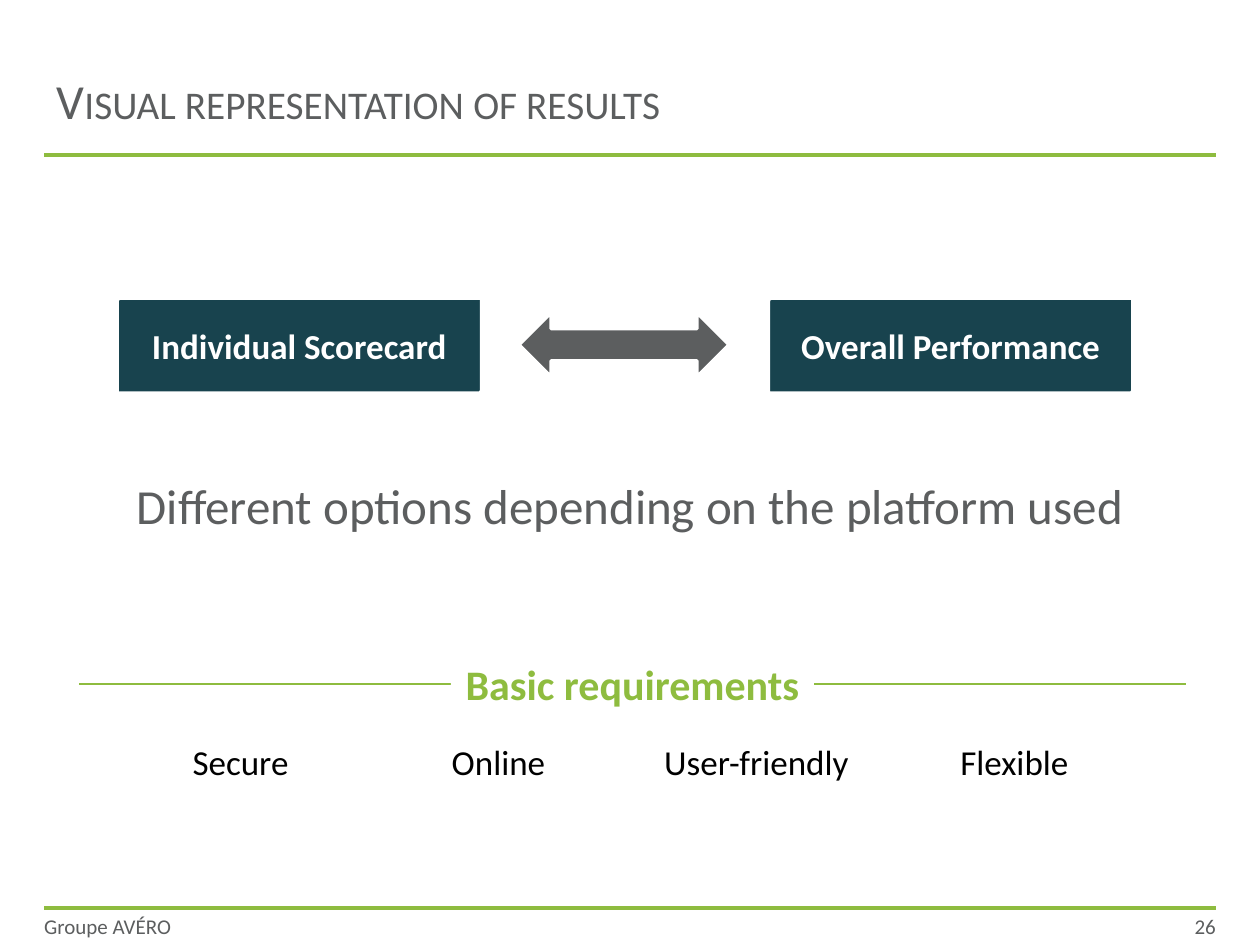
from dataclasses import dataclass

from lxml import etree
from pptx import Presentation
from pptx.dml.color import RGBColor
from pptx.enum.shapes import MSO_CONNECTOR, MSO_SHAPE
from pptx.enum.text import MSO_ANCHOR, MSO_AUTO_SIZE, PP_ALIGN
from pptx.oxml.ns import qn
from pptx.util import Cm, Pt

STRAIGHT = MSO_CONNECTOR.STRAIGHT
CARD_SHAPE = MSO_SHAPE.ROUND_2_DIAG_RECTANGLE
ARROW_SHAPE = MSO_SHAPE.LEFT_RIGHT_ARROW
LEFT, CENTER, RIGHT = PP_ALIGN.LEFT, PP_ALIGN.CENTER, PP_ALIGN.RIGHT
TOP, MIDDLE = MSO_ANCHOR.TOP, MSO_ANCHOR.MIDDLE
NO_FIT, GROW = MSO_AUTO_SIZE.NONE, MSO_AUTO_SIZE.SHAPE_TO_FIT_TEXT

FONT = "Calibri"
COLORS = {
    "green": "8EBC3F",
    "grey": "5C5E5F",
    "teal": "18434E",
    "white": "FFFFFF",
    "black": "000000",
}
MARGIN_LEFT, MARGIN_RIGHT = 0.89, 24.51
CONTENT_WIDTH = MARGIN_RIGHT - MARGIN_LEFT
FOOTER_TOP = 18.31


@dataclass(frozen=True)
class Box:
    left: float
    top: float
    width: float
    height: float

    def lengths(self) -> tuple:
        return Cm(self.left), Cm(self.top), Cm(self.width), Cm(self.height)


@dataclass(frozen=True)
class Style:
    size: float
    color: str
    bold: bool = False
    align: PP_ALIGN = CENTER
    anchor: MSO_ANCHOR = TOP


@dataclass(frozen=True)
class Rule:
    left: float
    right: float
    y: float
    weight: float


@dataclass(frozen=True)
class Requirement:
    label: str
    width: float
    wrap: bool = False


RULES = [
    Rule(MARGIN_LEFT, MARGIN_RIGHT, 3.12, 2.25),
    Rule(MARGIN_LEFT, MARGIN_RIGHT, FOOTER_TOP, 2.25),
    Rule(1.6, 23.9, 13.79, 0.75),
]
CARDS = [
    ("Individual Scorecard", Box(2.34, 5.99, 7.39, 1.96)),
    ("Overall Performance", Box(15.47, 5.99, 7.39, 1.96)),
]
REQUIREMENTS = [
    Requirement("Secure", 4.72, wrap=True),
    Requirement("Online", 2.41),
    Requirement("User-friendly", 4.29),
    Requirement("Flexible", 2.72),
]
FIRST_REQUIREMENT_CENTER, REQUIREMENT_STEP = 4.85, 5.2


def rgb(color: str) -> RGBColor:
    return RGBColor.from_string(COLORS[color])


def write(frame, text: str, style: Style):
    frame.text = text
    frame.vertical_anchor = style.anchor
    paragraph = frame.paragraphs[0]
    paragraph.alignment = style.align
    paragraph.font.name = FONT
    paragraph.font.size = Pt(style.size)
    paragraph.font.bold = style.bold
    paragraph.font.color.rgb = rgb(style.color)
    return paragraph


def add_text(slide, text: str, box: Box, style: Style, wrap: bool = True,
             fit: MSO_AUTO_SIZE = NO_FIT):
    text_box = slide.shapes.add_textbox(*box.lengths())
    frame = text_box.text_frame
    frame.word_wrap = wrap
    frame.auto_size = fit
    write(frame, text, style)
    return text_box


def add_footer(slide, text: str, box: Box, align: PP_ALIGN) -> None:
    style = Style(12, "grey", align=align, anchor=MIDDLE)
    frame = add_text(slide, text, box, style).text_frame
    frame.margin_left = frame.margin_right = 0
    frame.margin_top = frame.margin_bottom = 0


def add_rule(slide, rule: Rule) -> None:
    line = slide.shapes.add_connector(
        STRAIGHT, Cm(rule.left), Cm(rule.y), Cm(rule.right), Cm(rule.y))
    line.line.color.rgb = rgb("green")
    line.line.width = Pt(rule.weight)
    etree.SubElement(line._element.spPr, qn("a:effectLst"))


def add_outlined_shape(slide, kind: MSO_SHAPE, box: Box, fill: str, weight: float):
    shape = slide.shapes.add_shape(kind, *box.lengths())
    shape.shadow.inherit = False
    shape.fill.solid()
    shape.fill.fore_color.rgb = rgb(fill)
    shape.line.color.rgb = rgb("white")
    shape.line.width = Pt(weight)
    return shape


def add_title(slide, text: str) -> None:
    title = slide.shapes.title
    title.left, title.top, title.width, title.height = Box(
        MARGIN_LEFT, 0.76, CONTENT_WIDTH, 2.49).lengths()
    title.text_frame.auto_size = NO_FIT
    paragraph = write(title.text_frame, text,
                      Style(28, "grey", align=LEFT, anchor=MIDDLE))
    paragraph.runs[0]._r.get_or_add_rPr().set("cap", "small")


def main() -> None:
    presentation = Presentation()
    presentation.slide_width, presentation.slide_height = Cm(25.4), Cm(19.05)
    slide = presentation.slides.add_slide(presentation.slide_layouts[5])

    add_title(slide, "Visual representation of results")
    for rule in RULES:
        add_rule(slide, rule)

    message = add_text(slide, "Different options depending on the platform used",
                       Box(MARGIN_LEFT, 9.47, CONTENT_WIDTH, 2.84), Style(28, "grey"))
    message.text_frame.paragraphs[0].space_before = Pt(5)

    for label, box in CARDS:
        card = add_outlined_shape(slide, CARD_SHAPE, box, "teal", 3.25)
        card.adjustments[0] = 0.04
        card.adjustments[1] = 0
        write(card.text_frame, label, Style(20, "white", bold=True, anchor=MIDDLE))
    add_outlined_shape(slide, ARROW_SHAPE, Box(10.46, 6.3, 4.24, 1.3), "grey", 2)

    heading = add_text(slide, "Basic requirements", Box(9.09, 13.16, 7.32, 1.27),
                       Style(24, "green", bold=True), wrap=False, fit=GROW)
    heading.fill.solid()
    heading.fill.fore_color.rgb = rgb("white")

    for index, requirement in enumerate(REQUIREMENTS):
        center = FIRST_REQUIREMENT_CENTER + index * REQUIREMENT_STEP
        box = Box(center - requirement.width / 2, 14.81, requirement.width, 1.12)
        add_text(slide, requirement.label, box, Style(20, "black"),
                 wrap=requirement.wrap, fit=GROW)

    add_footer(slide, "Groupe AVÉRO", Box(MARGIN_LEFT, FOOTER_TOP, 4.6, 0.71), LEFT)
    add_footer(slide, "26", Box(MARGIN_RIGHT - 4.2, FOOTER_TOP, 4.2, 0.71), RIGHT)

    presentation.save("out.pptx")


if __name__ == "__main__":
    main()
